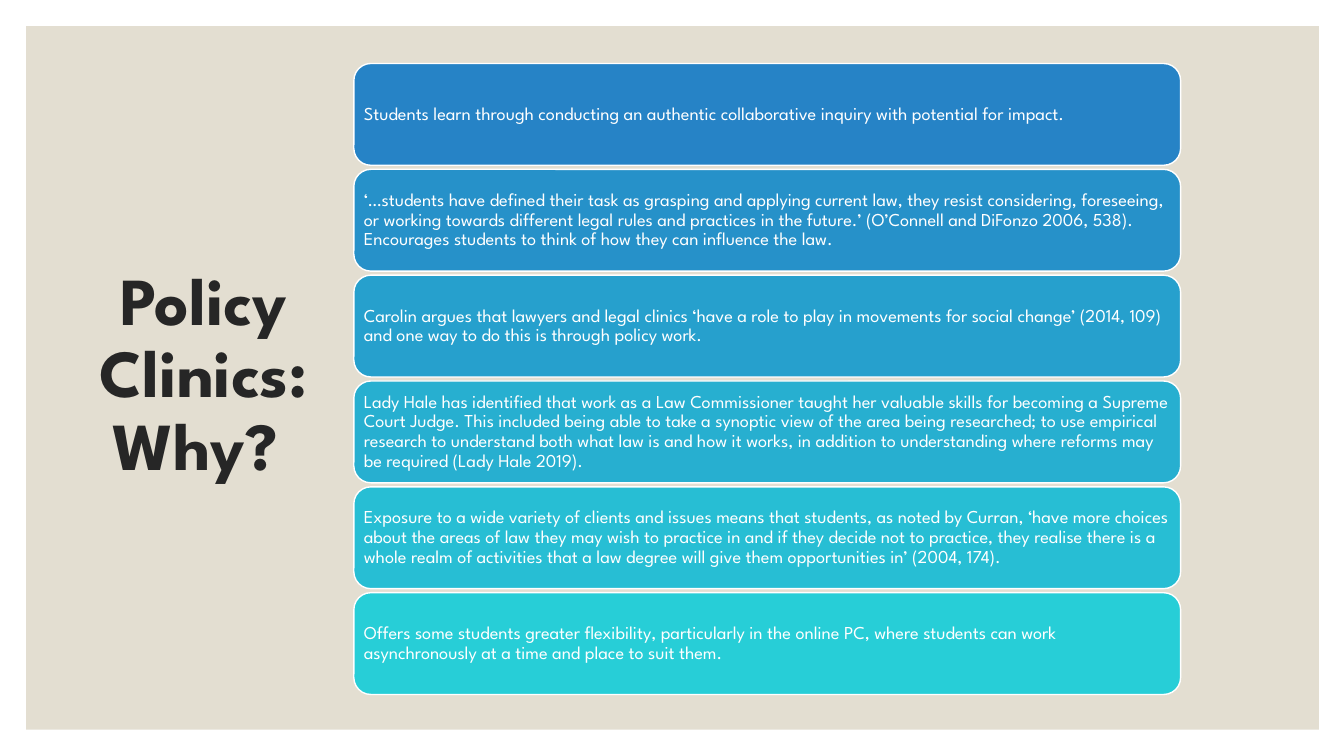
"""Build the slide on why policy clinics matter."""
import dataclasses

import pptx
import pptx.dml.color
import pptx.enum.shapes
import pptx.enum.text
import pptx.util

Inches = pptx.util.Inches
Shape = pptx.enum.shapes.MSO_SHAPE
Align = pptx.enum.text.PP_ALIGN

REASONS = [
    "Students learn through conducting an authentic collaborative inquiry with potential for impact.",
    "‘…students have defined their task as grasping and applying current law, they resist considering, "
    "foreseeing, or working towards different legal rules and practices in the future.’ (O’Connell and "
    "DiFonzo 2006, 538).  Encourages students to think of how they can influence the law.",
    "Carolin argues that lawyers and legal clinics ‘have a role to play in movements for social change’ "
    "(2014, 109) and one way to do this is through policy work.",
    "Lady Hale has identified that work as a Law Commissioner taught her valuable skills for becoming a "
    "Supreme Court Judge. This included being able to take a synoptic view of the area being researched; "
    "to use empirical research to understand both what law is and how it works, in addition to "
    "understanding where reforms may be required (Lady Hale 2019).",
    "Exposure to a wide variety of clients and issues means that students, as noted by Curran, ‘have more "
    "choices about the areas of law they may wish to practice in and if they decide not to practice, they "
    "realise there is a whole realm of activities that a law degree will give them opportunities in’ "
    "(2004, 174).",
    "Offers some students greater flexibility, particularly in the online PC, where students can work "
    "asynchronously at a time and place to suit them.",
]


@dataclasses.dataclass(frozen=True)
class Theme:
    """Hold the colours, font and type sizes."""
    font: str = "League Spartan"
    title_size: int = 48
    body_size: int = 13
    panel: str = "E3DED1"
    title: str = "262626"
    white: str = "FFFFFF"
    cards: tuple = ("2683C6", "2691C9", "26A0CD", "27AFD0", "27BED4", "27CED7")


def rgb(value):
    """Turn a hex string into a colour."""
    return pptx.dml.color.RGBColor.from_string(value)


def write_text(box, text, *, font, size, color, bold=False, align=Align.LEFT, inset=0.1):
    """Write one vertically centred paragraph into a shape."""
    frame = box.text_frame
    frame.word_wrap = True
    frame.vertical_anchor = pptx.enum.text.MSO_ANCHOR.MIDDLE
    frame.margin_left = frame.margin_right = Inches(inset)
    frame.margin_top = frame.margin_bottom = Inches(0.05)
    para = frame.paragraphs[0]
    para.alignment = align
    para.line_spacing = 0.9
    span = para.add_run()
    span.text = text
    span.font.name = font
    span.font.size = pptx.util.Pt(size)
    span.font.bold = bold
    span.font.color.rgb = rgb(color)


class Painter:
    """Draw themed elements on the current page."""

    def __init__(self, page, theme):
        """Keep the page and its theme."""
        self.page = page
        self.theme = theme

    def block(self, kind, left, top, width, height, fill, line=None):
        """Add a filled shape with an optional outline."""
        box = self.page.shapes.add_shape(kind, Inches(left), Inches(top), Inches(width), Inches(height))
        box.shadow.inherit = False
        box.fill.solid()
        box.fill.fore_color.rgb = rgb(fill)
        if line:
            box.line.color.rgb = rgb(line)
            box.line.width = pptx.util.Pt(1)
        else:
            box.line.fill.background()
        return box

    def panel(self):
        """Add the backdrop inside the white margin."""
        self.block(Shape.RECTANGLE, 0.26, 0.26, 12.82, 6.98, self.theme.panel)

    def title(self, text):
        """Add the heading on the left."""
        box = self.page.shapes.add_textbox(Inches(0.63), Inches(0.61), Inches(2.78), Inches(6.24))
        write_text(box, text, font=self.theme.font, size=self.theme.title_size,
                   color=self.theme.title, bold=True, align=Align.CENTER)

    def card(self, top, text, fill):
        """Add one rounded card holding a reason."""
        box = self.block(Shape.ROUNDED_RECTANGLE, 3.51, top, 8.2, 1.01, fill, self.theme.white)
        write_text(box, text, font=self.theme.font, size=self.theme.body_size,
                   color=self.theme.white, inset=0.05)


def main():
    """Build and save the deck."""
    deck = pptx.Presentation()
    deck.slide_width, deck.slide_height = Inches(13.33), Inches(7.5)
    theme = Theme()
    painter = Painter(deck.slides.add_slide(deck.slide_layouts[6]), theme)
    painter.panel()
    painter.title("Policy Clinics: Why? ")
    for index, (reason, fill) in enumerate(zip(REASONS, theme.cards)):
        painter.card(0.63 + 1.05 * index, reason, fill)
    deck.save("out.pptx")


if __name__ == "__main__":
    main()
